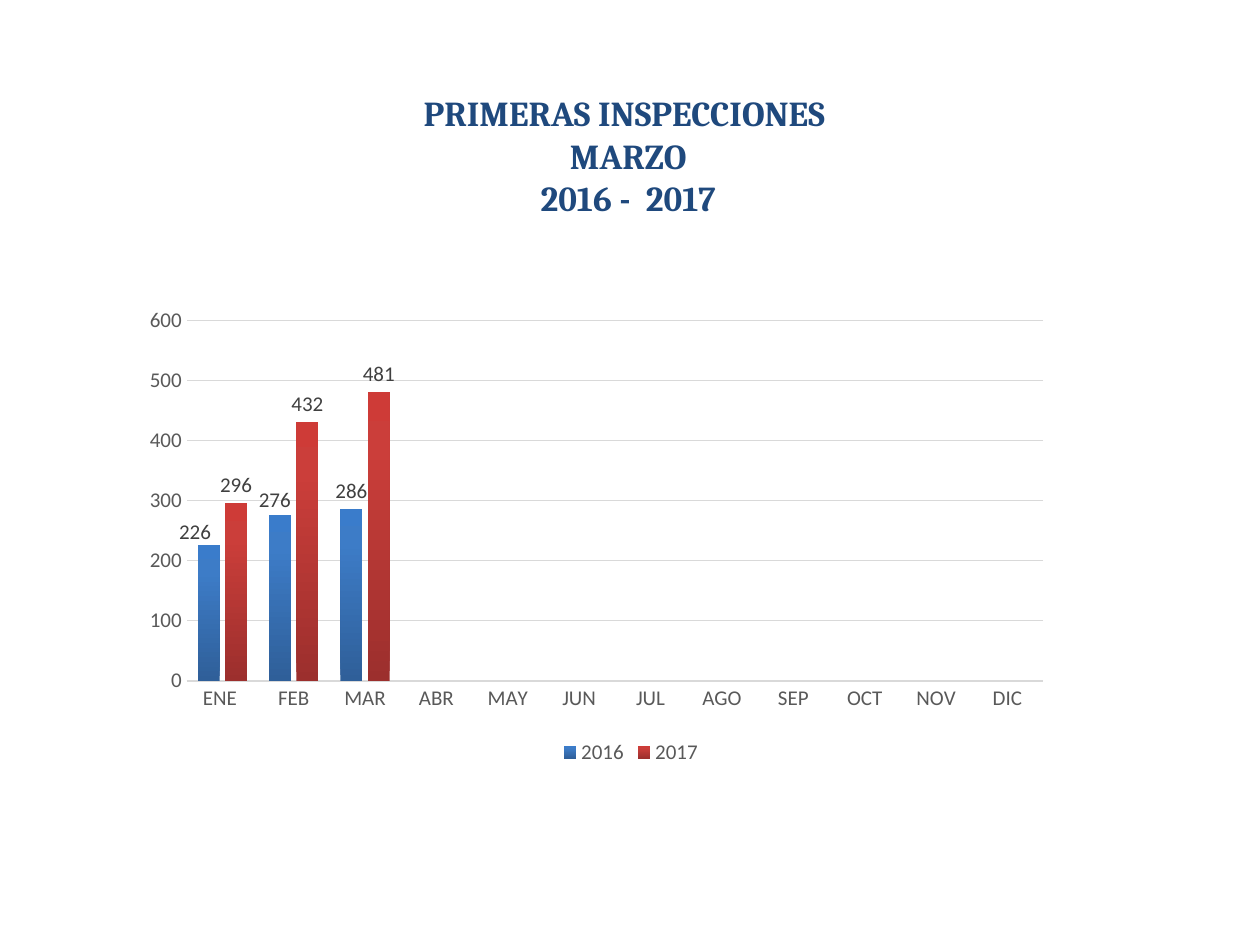
from lxml import etree
from pptx import Presentation
from pptx.chart.data import CategoryChartData
from pptx.dml.color import RGBColor
from pptx.enum.chart import XL_CHART_TYPE, XL_LABEL_POSITION, XL_LEGEND_POSITION, XL_TICK_MARK
from pptx.enum.text import MSO_AUTO_SIZE, PP_ALIGN
from pptx.oxml import parse_xml
from pptx.oxml.ns import nsdecls, qn
from pptx.util import Cm, Pt

COLUMN = XL_CHART_TYPE.COLUMN_CLUSTERED
OUTER = XL_LABEL_POSITION.OUTSIDE_END
BOTTOM = XL_LEGEND_POSITION.BOTTOM
NO_TICK = XL_TICK_MARK.NONE
CENTER = PP_ALIGN.CENTER
GROW = MSO_AUTO_SIZE.SHAPE_TO_FIT_TEXT

TITLE = ["PRIMERAS INSPECCIONES ", "MARZO", "2016 -  2017"]
MONTHS = ["ENE ", "FEB", "MAR", "ABR", "MAY", "JUN",
          "JUL", "AGO", "SEP", "OCT", "NOV", "DIC"]
YEARS = [
    {"name": "2016", "vals": [226, 276, 286],
     "stops": [(0, "2F5F99"), (80, "3D7CC7"), (100, "3A7CCB")],
     "shifts": {0: (-0.013, 0.01), 1: (-0.005, 0.006)}},
    {"name": "2017", "vals": [296, 432, 481],
     "stops": [(0, "9C2F2D"), (80, "CB3E3A"), (100, "CE3B37")],
     "shifts": {}},
]
PLOT = {"x": 0.078, "y": 0.057, "w": 0.814, "h": 0.756}


def color(code):
    return RGBColor.from_string(code)


def style(font, size, code, face="Calibri"):
    font.size = Pt(size)
    font.name = face
    font.color.rgb = color(code)


def layout(parts, inner=False):
    root = parse_xml(f"<c:layout {nsdecls('c')}><c:manualLayout/></c:layout>")
    tags = []
    if inner:
        tags = [("layoutTarget", "inner"), ("xMode", "edge"), ("yMode", "edge")]
    for tag, val in tags + list(parts.items()):
        etree.SubElement(root[0], qn(f"c:{tag}")).set("val", str(val))
    return root


def shade(stops):
    marks = "".join(
        f'<a:gs pos="{pos * 1000}"><a:srgbClr val="{code}"/></a:gs>'
        for pos, code in stops)
    return parse_xml(
        f'<a:gradFill {nsdecls("a")} rotWithShape="1"><a:gsLst>{marks}</a:gsLst>'
        '<a:lin ang="16200000" scaled="0"/></a:gradFill>')


def add_title(slide):
    box = slide.shapes.add_textbox(Cm(6.91), Cm(1.73), Cm(11.51), Cm(2.82))
    frame = box.text_frame
    frame.word_wrap = True
    frame.auto_size = GROW
    for i, line in enumerate(TITLE):
        para = frame.add_paragraph() if i else frame.paragraphs[0]
        para.alignment = CENTER
        run = para.add_run()
        run.text = line
        run.font.bold = True
        style(run.font, 20, "1F497D", "Cambria")


def add_bars(slide):
    data = CategoryChartData()
    data.categories = MONTHS
    for year in YEARS:
        gap = len(MONTHS) - len(year["vals"])
        data.add_series(year["name"], year["vals"] + [None] * gap)
    chart = slide.shapes.add_chart(
        COLUMN, Cm(2.11), Cm(5.92), Cm(21.21), Cm(9.6), data).chart
    style(chart.font, 10, "000000")
    chart.has_title = False
    chart.has_legend = True
    chart.legend.position = BOTTOM
    chart.legend.include_in_layout = False
    style(chart.legend.font, 12, "595959")

    cat, val = chart.category_axis, chart.value_axis
    for axis in (cat, val):
        axis.major_tick_mark = axis.minor_tick_mark = NO_TICK
        style(axis.tick_labels.font, 12, "595959")
    cat.format.line.color.rgb = color("D9D9D9")
    cat.format.line.width = Pt(1)
    val.format.line.fill.background()
    val.minimum_scale, val.maximum_scale, val.major_unit = 0, 600, 100
    grid = val.major_gridlines.format.line
    grid.color.rgb = color("D9D9D9")
    grid.width = Pt(0.75)

    plot = chart.plots[0]
    plot.vary_by_categories = False
    plot.gap_width = 100
    plot.overlap = -24
    for ser, year in zip(plot.series, YEARS):
        ser._element.get_or_add_spPr().append(shade(year["stops"]))
        tags = ser.data_labels
        tags.show_value = True
        tags.position = OUTER
        style(tags.font, 12, "404040")
        for i, (x, y) in year["shifts"].items():
            tag = ser.points[i].data_label
            tag.position = OUTER
            style(tag.font, 12, "404040")
            node = ser._element.xpath(f"c:dLbls/c:dLbl[c:idx/@val='{i}']")[0]
            node.insert(1, layout({"x": x, "y": y}))

    area = chart._chartSpace.chart.plotArea
    for old in area.findall(qn("c:layout")):
        area.remove(old)
    area.insert(0, layout(PLOT, inner=True))


def main():
    deck = Presentation()
    deck.slide_width, deck.slide_height = Cm(25.4), Cm(19.05)
    slide = deck.slides.add_slide(deck.slide_layouts[6])
    add_title(slide)
    add_bars(slide)
    deck.save("out.pptx")


if __name__ == "__main__":
    main()
